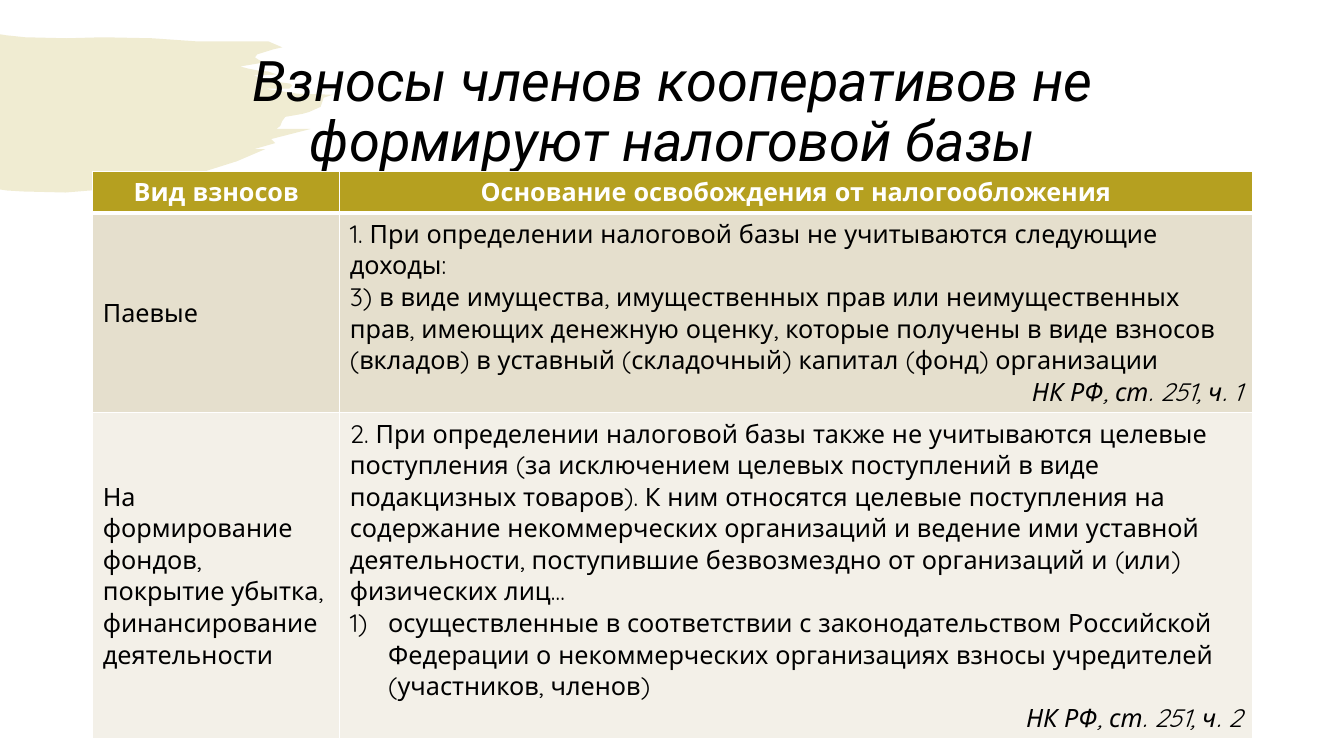
from lxml import etree
from pptx import Presentation, util as u
from pptx.dml.color import RGBColor
from pptx.enum import text as t
from pptx.oxml.ns import qn

WIDE, HIGH = 13.33, 7.5
LEFT, SPAN = 0.92, 11.5
GOLD, WHITE, BLACK = "B5A020", "FFFFFF", "000000"
TITLE = "Взносы членов кооперативов не формируют налоговой базы"
COLS = [2.45, 9.05]
ROWS = [0.41, 1.98, 3.23]
FILLS = [GOLD, "E5DFCD", "F3F0E8"]
CELLS = [
    [[("Вид взносов", "head")],
     [("Основание освобождения от налогообложения", "head")]],
    [[("Паевые", "body")],
     [("1. При определении налоговой базы не учитываются следующие доходы:", "body"),
      ("3) в виде имущества, имущественных прав или неимущественных прав, "
       "имеющих денежную оценку, которые получены в виде взносов (вкладов) "
       "в уставный (складочный) капитал (фонд) организации", "body"),
      ("НК РФ, ст. 251, ч. 1", "cite")]],
    [[("На формирование фондов, покрытие убытка, финансирование деятельности", "body")],
     [("2. При определении налоговой базы также не учитываются целевые поступления "
       "(за исключением целевых поступлений в виде подакцизных товаров). "
       "К ним относятся целевые поступления на содержание некоммерческих организаций "
       "и ведение ими уставной деятельности, поступившие безвозмездно от организаций "
       "и (или) физических лиц…", "body"),
      ("осуществленные в соответствии с законодательством Российской Федерации "
       "о некоммерческих организациях взносы учредителей (участников, членов)", "item"),
      ("НК РФ, ст. 251, ч. 2", "cite")]],
]
BASE = {"name": "Quicksand", "size": u.Pt(18), "bold": False, "italic": False}
LOOKS = {
    "title": ({"name": "Roboto", "size": u.Pt(40), "italic": True}, BLACK, t.PP_ALIGN.CENTER),
    "head": ({**BASE, "bold": True}, WHITE, t.PP_ALIGN.CENTER),
    "body": (BASE, BLACK, t.PP_ALIGN.LEFT),
    "item": (BASE, BLACK, t.PP_ALIGN.LEFT),
    "cite": ({**BASE, "italic": True}, BLACK, t.PP_ALIGN.RIGHT),
}
BRUSH = [
    (0, 0.34), (0.06, 0.35), (0.25, 0.37), (0.66, 0.38), (1.02, 0.37), (1.51, 0.38),
    (1.94, 0.41), (2.48, 0.41), (2.66, 0.41), (2.8, 0.47), (2.71, 0.49), (2.55, 0.54),
    (2.53, 0.57), (2.56, 0.59), (2.62, 0.62), (2.38, 0.66), (2.46, 0.68), (2.56, 0.7),
    (2.66, 0.71), (2.75, 0.74), (2.51, 0.75), (2.63, 0.78), (2.73, 0.81), (2.8, 0.82),
    (2.88, 0.83), (2.9, 0.85), (2.87, 0.88), (2.84, 0.88), (2.63, 0.88), (2.95, 0.93),
    (3.3, 0.94), (3.21, 0.97), (3.18, 1.06), (3.07, 1.11), (3, 1.13), (2.83, 1.16),
    (2.8, 1.2), (2.78, 1.25), (2.74, 1.28), (3.08, 1.28), (2.69, 1.38), (2.73, 1.42),
    (2.52, 1.48), (2.63, 1.48), (2.35, 1.6), (1.97, 1.72), (1.5, 1.81), (1.02, 1.88),
    (0.65, 1.91), (0.23, 1.9), (0.07, 1.89), (0, 1.88),
]


def paint(fill, tint):
    fill.solid()
    fill.fore_color.rgb = RGBColor.from_string(tint)


def write(para, words, look):
    fmt, tint, side = LOOKS[look]
    run = para.add_run()
    run.text = words
    for key, val in fmt.items():
        setattr(run.font, key, val)
    run.font.color.rgb = RGBColor.from_string(tint)
    para.alignment = side
    if look == "item":
        prop = para._p.get_or_add_pPr()
        prop.set("marL", str(u.Inches(0.38)))
        prop.set("indent", str(-u.Inches(0.38)))
        etree.SubElement(prop, qn("a:buFont"), typeface="+mj-lt")
        etree.SubElement(prop, qn("a:buAutoNum"), type="arabicParenR")


def edge(cell, tag, width):
    line = etree.SubElement(cell._tc.get_or_add_tcPr(), qn("a:" + tag), w=str(u.Pt(width)))
    fill = etree.SubElement(line, qn("a:solidFill"))
    etree.SubElement(fill, qn("a:srgbClr"), val=WHITE)


def brush(slide):
    pen = slide.shapes.build_freeform(0, u.Inches(BRUSH[0][1]))
    pen.add_line_segments([(u.Inches(x), u.Inches(y)) for x, y in BRUSH[1:]], close=True)
    blob = pen.convert_to_shape()
    blob.shadow.inherit = False
    paint(blob.fill, GOLD)
    blob.line.fill.background()
    tint = blob._element.spPr.find(qn("a:solidFill"))[0]
    etree.SubElement(tint, qn("a:alpha"), val="20000")
    slide.shapes._spTree.insert(2, blob._element)


def title(slide):
    head = slide.shapes.title
    spot = {"left": LEFT, "top": 0.4, "width": SPAN, "height": 1.45}
    for key, val in spot.items():
        setattr(head, key, u.Inches(val))
    frame = head.text_frame
    frame.word_wrap = True
    frame.auto_size = t.MSO_AUTO_SIZE.NONE
    frame.vertical_anchor = t.MSO_ANCHOR.MIDDLE
    write(frame.paragraphs[0], TITLE, "title")
    frame.paragraphs[0].line_spacing = 0.9


def table(slide):
    box = [u.Inches(n) for n in (LEFT, 1.7, SPAN, sum(ROWS))]
    grid = slide.shapes.add_table(len(ROWS), len(COLS), *box).table
    grid.horz_banding = False
    for col, width in zip(grid.columns, COLS):
        col.width = u.Inches(width)
    for r, (row, high) in enumerate(zip(grid.rows, ROWS)):
        row.height = u.Inches(high)
        for cell, lines in zip(row.cells, CELLS[r]):
            cell.vertical_anchor = t.MSO_ANCHOR.MIDDLE
            for tag in ("lnL", "lnR", "lnT", "lnB"):
                thick = (r, tag) in ((0, "lnB"), (1, "lnT"))
                edge(cell, tag, 3 if thick else 1)
            paint(cell.fill, FILLS[r])
            frame = cell.text_frame
            for i, (words, look) in enumerate(lines):
                para = frame.add_paragraph() if i else frame.paragraphs[0]
                write(para, words, look)


def main():
    deck = Presentation()
    deck.slide_width, deck.slide_height = u.Inches(WIDE), u.Inches(HIGH)
    slide = deck.slides.add_slide(deck.slide_layouts[5])
    brush(slide)
    title(slide)
    table(slide)
    deck.save("out.pptx")


if __name__ == "__main__":
    main()
